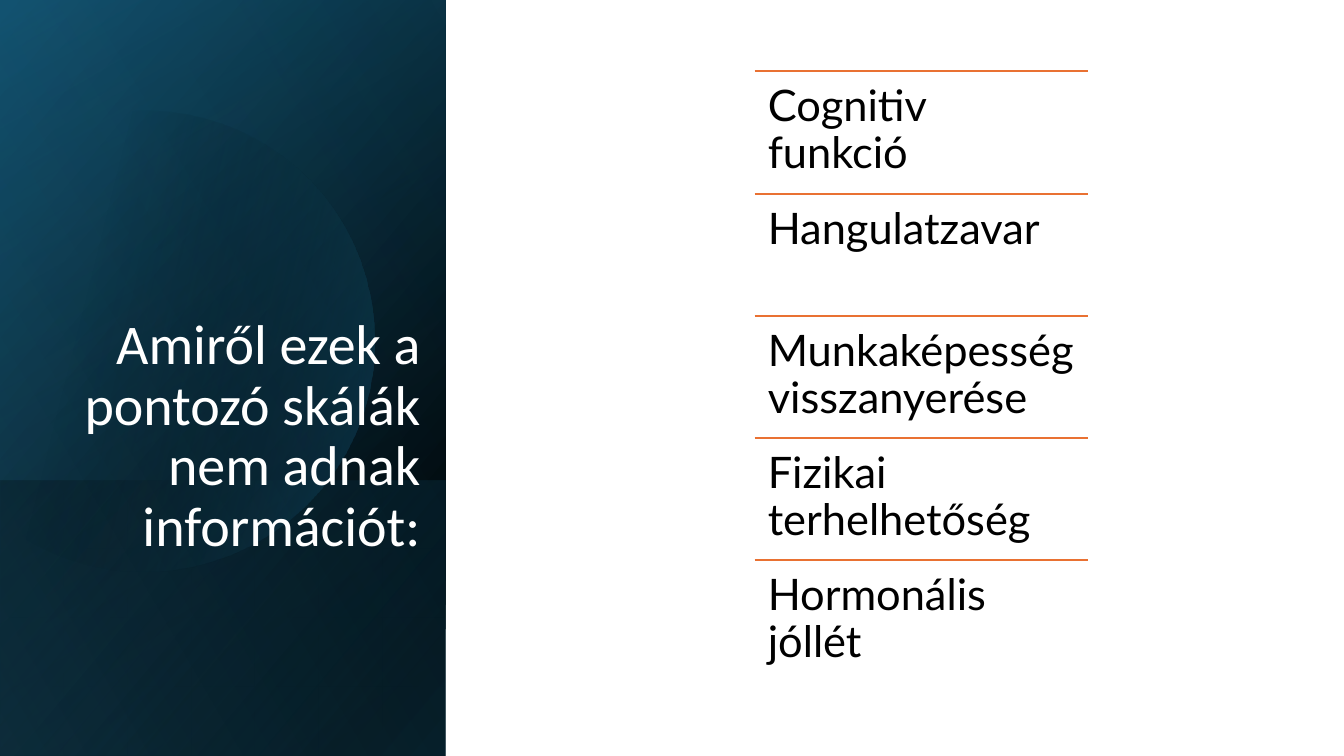
from dataclasses import dataclass

from pptx import Presentation
from pptx.dml.color import RGBColor
from pptx.enum.shapes import MSO_CONNECTOR, MSO_SHAPE
from pptx.enum.text import MSO_ANCHOR, MSO_AUTO_SIZE, PP_ALIGN
from pptx.oxml import parse_xml
from pptx.oxml.ns import nsdecls, qn
from pptx.util import Cm, Pt


@dataclass(frozen=True)
class Theme:
    black: str = "000000"
    navy: str = "104862"
    teal: str = "156082"
    sky: str = "46B1E1"
    orange: str = "E97132"
    white: str = "FFFFFF"
    title_font: str = "Calibri"
    item_font: str = "Lato"
    title_size: int = 40
    item_size: int = 31
    rule_width: float = 1.5


theme = Theme()


def apply_gradient(shape, stops, angle):
    stop_xml = "".join(
        f'<a:gs pos="{position * 1000}"><a:srgbClr val="{color}">'
        f'<a:alpha val="{opacity * 1000}"/></a:srgbClr></a:gs>'
        for position, color, opacity in stops
    )
    gradient = parse_xml(
        f'<a:gradFill {nsdecls("a")} rotWithShape="1"><a:gsLst>{stop_xml}</a:gsLst>'
        f'<a:lin ang="{angle * 60000}" scaled="0"/></a:gradFill>'
    )
    shape.fill.background()
    properties = shape.element.spPr
    properties.replace(properties.find(qn("a:noFill")), gradient)
    shape.line.fill.background()
    shape.shadow.inherit = False


def add_panel(top, height, flipped, stops, angle):
    center_x, center_y = panel_width / 2, top + height / 2
    panel = slide.shapes.add_shape(
        MSO_SHAPE.RECTANGLE,
        Cm(center_x - height / 2), Cm(center_y - panel_width / 2),
        Cm(height), Cm(panel_width),
    )
    panel.rotation = 90
    if flipped:
        panel.element.spPr.find(qn("a:xfrm")).set("flipH", "1")
    apply_gradient(panel, stops, angle)


presentation = Presentation()
presentation.slide_width = Cm(33.87)
presentation.slide_height = Cm(19.05)
slide = presentation.slides.add_slide(presentation.slide_layouts[5])

panel_width = 11.23
panel_height = 19.05
lower_top = 12.1

add_panel(0, panel_height, True, [(8, theme.black, 100), (100, theme.navy, 100)], 50)
add_panel(0, panel_height, True, [(0, theme.black, 0), (99, theme.teal, 46)], 30)
add_panel(lower_top, panel_height - lower_top, False,
          [(2, theme.teal, 29), (100, theme.black, 30)], 130)

disc_curves = [
    [(3.78, 2.79), (6.25, 2.84), (8.51, 4.5), (9.22, 6.99)],
    [(9.22, 6.99), (10.11, 10.08), (8.33, 13.28), (5.26, 14.17)],
    [(5.26, 14.17), (3.33, 14.73), (1.35, 14.25), (-0.08, 13.06)],
    [(-0.38, 12.78), (-0.38, 10), (-0.38, 7.23), (-0.38, 4.45)],
    [(0, 4.09), (0.58, 3.61), (1.27, 3.23), (2.03, 3.02)],
    [(2.03, 3.02), (2.62, 2.87), (3.2, 2.79), (3.78, 2.79)],
]
curve_steps = 16
disc_points = []
for curve in disc_curves:
    for step in range(curve_steps + 1):
        t = step / curve_steps
        weights = ((1 - t) ** 3, 3 * t * (1 - t) ** 2, 3 * t ** 2 * (1 - t), t ** 3)
        disc_points.append(tuple(
            Cm(sum(weight * point[axis] for weight, point in zip(weights, curve)))
            for axis in (0, 1)
        ))
builder = slide.shapes.build_freeform(*disc_points[0])
builder.add_line_segments(disc_points[1:], close=True)
disc = builder.convert_to_shape()
apply_gradient(disc, [(29, theme.black, 0), (100, theme.teal, 43)], 14)

add_panel(0, panel_height, True, [(0, theme.black, 0), (99, theme.sky, 11)], 120)

title = slide.shapes.title
title.left, title.top, title.width, title.height = Cm(1.3), Cm(4.8), Cm(9.55), Cm(9.4)
slide.shapes.element.append(title.element)
title_frame = title.text_frame
title_frame.text = "Amiről ezek a pontozó skálák nem adnak információt:"
title_frame.word_wrap = True
title_frame.auto_size = MSO_AUTO_SIZE.NONE
title_frame.vertical_anchor = MSO_ANCHOR.BOTTOM
paragraph = title_frame.paragraphs[0]
paragraph.alignment = PP_ALIGN.RIGHT
paragraph.line_spacing = 0.9
paragraph.font.name = theme.title_font
paragraph.font.size = Pt(theme.title_size)
paragraph.font.color.rgb = RGBColor.from_string(theme.white)

items = [
    "Cognitiv funkció",
    "Hangulatzavar",
    "Munkaképesség visszanyerése",
    "Fizikai terhelhetőség",
    "Hormonális jóllét",
]
list_left, list_top, list_width, row_height = 19.02, 1.8, 8.41, 3.08
item_inset = Cm(0.33)
item_group = slide.shapes.add_group_shape()
for row, item in enumerate(items):
    top = list_top + row * row_height
    rule = item_group.shapes.add_connector(
        MSO_CONNECTOR.STRAIGHT,
        Cm(list_left), Cm(top), Cm(list_left + list_width), Cm(top),
    )
    rule.line.color.rgb = RGBColor.from_string(theme.orange)
    rule.line.width = Pt(theme.rule_width)
    rule.element.spPr.append(parse_xml(f'<a:effectLst {nsdecls("a")}/>'))

    label = item_group.shapes.add_textbox(
        Cm(list_left), Cm(top), Cm(list_width), Cm(row_height)
    )
    frame = label.text_frame
    frame.text = item
    frame.word_wrap = True
    frame.vertical_anchor = MSO_ANCHOR.TOP
    frame.margin_left = frame.margin_right = item_inset
    frame.margin_top = frame.margin_bottom = item_inset
    paragraph = frame.paragraphs[0]
    paragraph.line_spacing = 0.9
    paragraph.font.name = theme.item_font
    paragraph.font.size = Pt(theme.item_size)
    paragraph.font.color.rgb = RGBColor.from_string(theme.black)

presentation.save("out.pptx")
